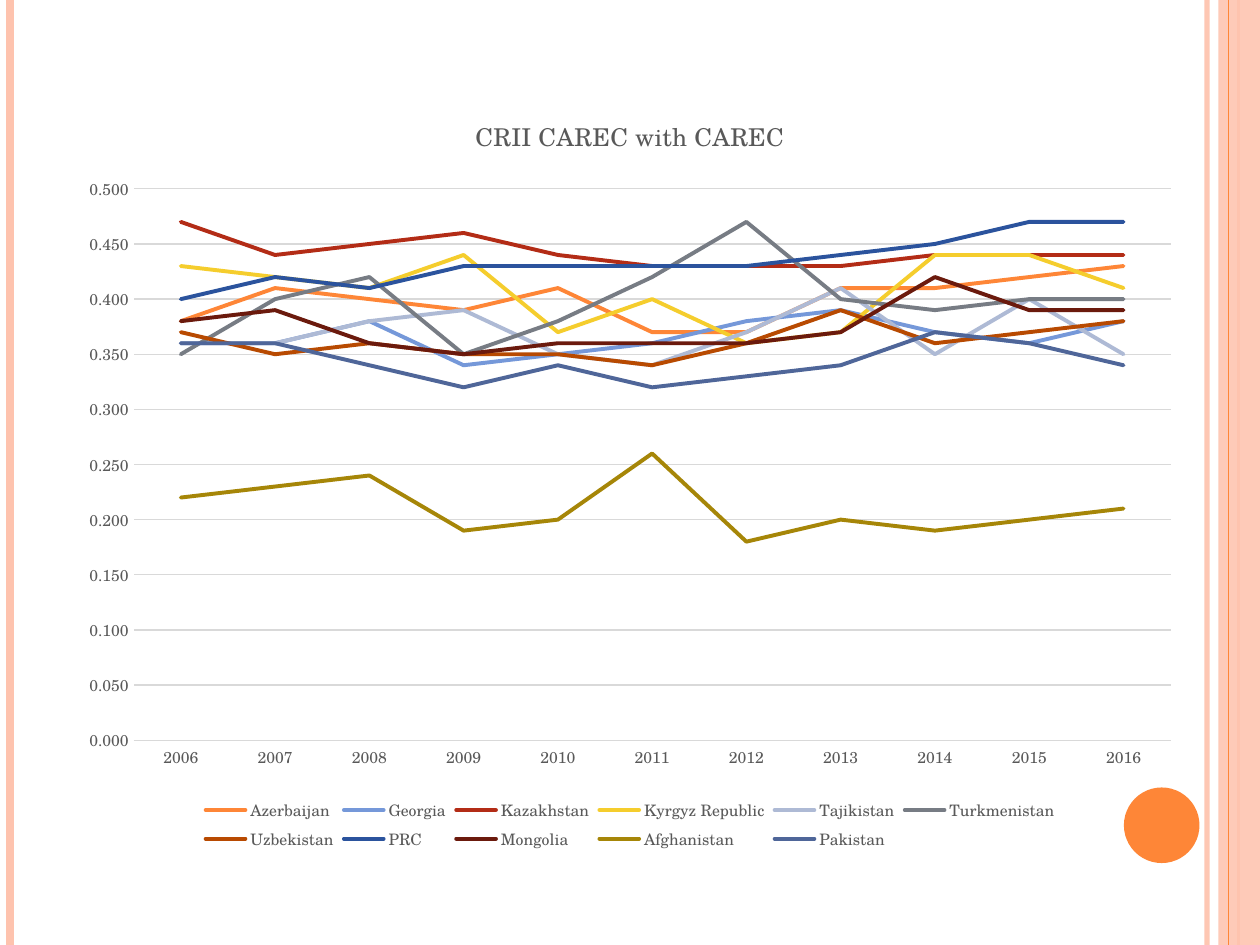
import pptx
import pptx.chart.data
import pptx.dml.color
import pptx.enum.chart
import pptx.enum.shapes
import pptx.oxml
import pptx.oxml.ns
import pptx.util
from pptx.util import Inches

RGBColor = pptx.dml.color.RGBColor
ORANGE = RGBColor(0xFE, 0x86, 0x37)
PEACH = RGBColor(0xFE, 0xC3, 0xAE)
GREY_TEXT = RGBColor(0x59, 0x59, 0x59)
GRID_GREY = RGBColor(0xD9, 0xD9, 0xD9)
FONT = "TeX Gyre Schola"


def set_alpha(fill_parent, percent):
    color = fill_parent.find(".//" + pptx.oxml.ns.qn("a:srgbClr"))
    alpha = pptx.oxml.parse_xml("<a:alpha %s/>" % pptx.oxml.ns.nsdecls("a"))
    alpha.set("val", str(percent * 1000))
    color.append(alpha)


def set_font(font, size):
    font.name = FONT
    font.size = pptx.util.Pt(size)
    font.bold = False
    font.color.rgb = GREY_TEXT


presentation = pptx.Presentation()
presentation.slide_width = Inches(10)
presentation.slide_height = Inches(7.5)
slide = presentation.slides.add_slide(presentation.slide_layouts[6])
shapes = slide.shapes

# Right-hand band
band = shapes.add_shape(pptx.enum.shapes.MSO_SHAPE.RECTANGLE,
                        Inches(9.67), Inches(0), Inches(0.33), Inches(7.5))
band.shadow.inherit = False
band.fill.solid()
band.fill.fore_color.rgb = PEACH
band.line.fill.background()
set_alpha(band.element.spPr, 87)

# Vertical rules: position, colour, width, opacity
rules = [
    (9.58, PEACH, 3, 93),
    (0.08, PEACH, 4.5, 100),
    (9.83, PEACH, 1.5, 100),
    (9.75, ORANGE, 0.75, 100),
]
for x, color, width, opacity in rules:
    rule = shapes.add_connector(pptx.enum.shapes.MSO_CONNECTOR.STRAIGHT,
                                Inches(x), Inches(0), Inches(x), Inches(7.5))
    rule.line.color.rgb = color
    rule.line.width = pptx.util.Pt(width)
    if opacity < 100:
        set_alpha(rule.element.spPr, opacity)
    rule.element.spPr.append(
        pptx.oxml.parse_xml("<a:effectLst %s/>" % pptx.oxml.ns.nsdecls("a")))

# Corner disc
disc = shapes.add_shape(pptx.enum.shapes.MSO_SHAPE.OVAL,
                        Inches(8.92), Inches(6.25), Inches(0.6), Inches(0.6))
disc.shadow.inherit = False
disc.fill.solid()
disc.fill.fore_color.rgb = ORANGE
disc.line.fill.background()

# Index by country, 2006 to 2016
countries = [
    ("Azerbaijan", ORANGE,
     [0.38, 0.41, 0.4, 0.39, 0.41, 0.37, 0.37, 0.41, 0.41, 0.42, 0.43]),
    ("Georgia", RGBColor(0x75, 0x98, 0xD9),
     [0.36, 0.36, 0.38, 0.34, 0.35, 0.36, 0.38, 0.39, 0.37, 0.36, 0.38]),
    ("Kazakhstan", RGBColor(0xB3, 0x2C, 0x16),
     [0.47, 0.44, 0.45, 0.46, 0.44, 0.43, 0.43, 0.43, 0.44, 0.44, 0.44]),
    ("Kyrgyz Republic", RGBColor(0xF5, 0xCD, 0x2D),
     [0.43, 0.42, 0.41, 0.44, 0.37, 0.4, 0.36, 0.37, 0.44, 0.44, 0.41]),
    ("Tajikistan", RGBColor(0xAE, 0xBA, 0xD5),
     [0.36, 0.36, 0.38, 0.39, 0.35, 0.34, 0.37, 0.41, 0.35, 0.4, 0.35]),
    ("Turkmenistan", RGBColor(0x77, 0x7C, 0x84),
     [0.35, 0.4, 0.42, 0.35, 0.38, 0.42, 0.47, 0.4, 0.39, 0.4, 0.4]),
    ("Uzbekistan", RGBColor(0xB8, 0x4A, 0x01),
     [0.37, 0.35, 0.36, 0.35, 0.35, 0.34, 0.36, 0.39, 0.36, 0.37, 0.38]),
    ("PRC", RGBColor(0x2B, 0x53, 0x9D),
     [0.4, 0.42, 0.41, 0.43, 0.43, 0.43, 0.43, 0.44, 0.45, 0.47, 0.47]),
    ("Mongolia", RGBColor(0x6B, 0x1A, 0x0D),
     [0.38, 0.39, 0.36, 0.35, 0.36, 0.36, 0.36, 0.37, 0.42, 0.39, 0.39]),
    ("Afghanistan", RGBColor(0xA6, 0x86, 0x08),
     [0.22, 0.23, 0.24, 0.19, 0.2, 0.26, 0.18, 0.2, 0.19, 0.2, 0.21]),
    ("Pakistan", RGBColor(0x4F, 0x66, 0x99),
     [0.36, 0.36, 0.34, 0.32, 0.34, 0.32, 0.33, 0.34, 0.37, 0.36, 0.34]),
]
chart_data = pptx.chart.data.CategoryChartData(number_format="0.000")
chart_data.categories = [str(year) for year in range(2006, 2017)]
for name, color, values in countries:
    chart_data.add_series(name, values)

# Line chart
chart = shapes.add_chart(pptx.enum.chart.XL_CHART_TYPE.LINE,
                         Inches(0.53), Inches(0.7), Inches(8.94), Inches(6.09),
                         chart_data).chart
set_font(chart.font, 9)
chart.plots[0].vary_by_categories = False
for series, (name, color, values) in zip(chart.plots[0].series, countries):
    series.smooth = False
    series.marker.style = pptx.enum.chart.XL_MARKER_STYLE.NONE
    series.format.line.color.rgb = color
    series.format.line.width = pptx.util.Pt(2.25)

# Round line ends
for series_line in chart.element.iter(pptx.oxml.ns.qn("a:ln")):
    series_line.set("cap", "rnd")

# Chart title and legend
chart.has_title = True
title_frame = chart.chart_title.text_frame
title_frame.text = "CRII CAREC with CAREC"
set_font(title_frame.paragraphs[0].runs[0].font, 14)
chart.chart_title.include_in_layout = False
chart.has_legend = True
chart.legend.position = pptx.enum.chart.XL_LEGEND_POSITION.BOTTOM
chart.legend.include_in_layout = False
set_font(chart.legend.font, 9)

# Axes
category_axis, value_axis = chart.category_axis, chart.value_axis
for axis in (category_axis, value_axis):
    axis.major_tick_mark = pptx.enum.chart.XL_TICK_MARK.NONE
    axis.minor_tick_mark = pptx.enum.chart.XL_TICK_MARK.NONE
    set_font(axis.tick_labels.font, 9)
value_axis.minimum_scale = 0
value_axis.maximum_scale = 0.5
value_axis.major_unit = 0.05
value_axis.tick_labels.number_format = "0.000"
value_axis.tick_labels.number_format_is_linked = False
value_axis.format.line.fill.background()
for line in (category_axis.format.line, value_axis.major_gridlines.format.line):
    line.color.rgb = GRID_GREY
    line.width = pptx.util.Pt(0.75)

presentation.save("out.pptx")
